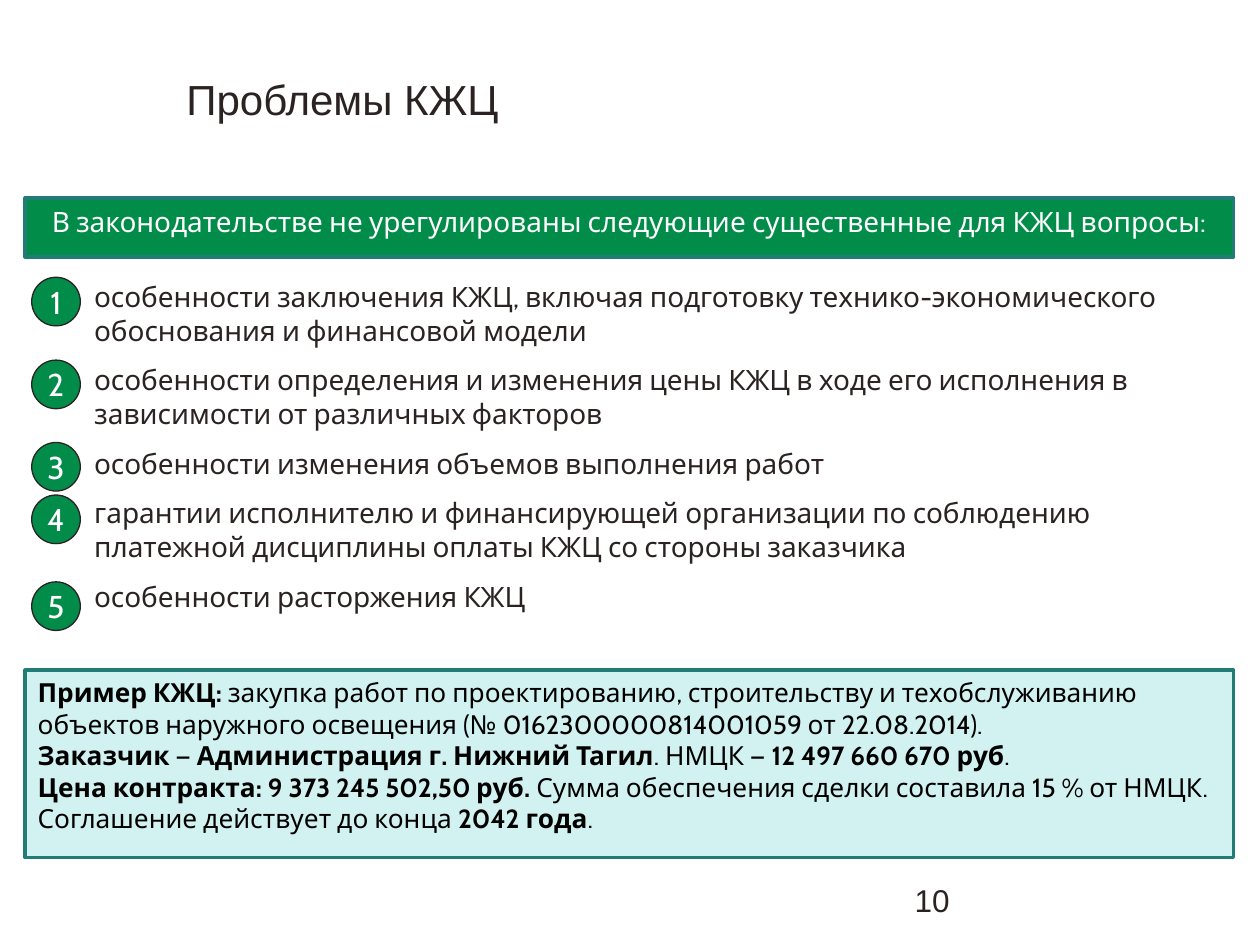
import pptx
import pptx.dml.color
import pptx.enum.shapes
import pptx.enum.text
import pptx.util

Cm = pptx.util.Cm
Pt = pptx.util.Pt
Shape = pptx.enum.shapes.MSO_SHAPE
Align = pptx.enum.text.PP_ALIGN
Anchor = pptx.enum.text.MSO_ANCHOR

INK = "2B2222"
GREEN = "028C4A"
TEAL = "227C76"
PALE = "D1F2F0"
WHITE = "FFFFFF"
BLACK = "000000"


def color(hex_string):
    return pptx.dml.color.RGBColor.from_string(hex_string)


def write(box, paragraphs, font, size, text_color, para_format, frame_format):
    """Fill a box; each paragraph is a list of (text, bold) pairs."""
    frame = box.text_frame
    for name, value in ({"word_wrap": True} | frame_format).items():
        setattr(frame, name, value)
    for index, spans in enumerate(paragraphs):
        para = frame.add_paragraph() if index else frame.paragraphs[0]
        for name, value in para_format.items():
            if index or name != "space_before":
                setattr(para, name, value)
        for text, bold in spans:
            span = para.add_run()
            span.text = text
            for name, value in {"name": font, "size": Pt(size), "bold": bold}.items():
                setattr(span.font, name, value)
            span.font.color.rgb = color(text_color)


deck = pptx.Presentation()
deck.slide_width = Cm(25.4)
deck.slide_height = Cm(19.05)
slide = deck.slides.add_slide(deck.slide_layouts[6])
shapes = slide.shapes

# Page number and title
for text, size, bounds in [
    ("10", 18, (18.21, 17.65, 5.92, 1.02)),
    ("Проблемы КЖЦ", 24, (3.53, 1.37, 20.35, 1.24)),
]:
    box = shapes.add_textbox(*map(Cm, bounds))
    margins = {"margin_left": Cm(0.23), "margin_right": Cm(0.23),
               "margin_top": Cm(0.11), "margin_bottom": Cm(0.11)}
    write(box, [[(text, False)]], "Arial", size, INK, {"alignment": Align.LEFT}, margins)

# Open issues
issues = [
    "особенности заключения КЖЦ, включая подготовку технико-экономического обоснования и финансовой модели",
    "особенности определения и изменения цены КЖЦ в ходе его исполнения в зависимости от различных факторов",
    "особенности изменения объемов выполнения работ",
    "гарантии исполнителю и финансирующей организации по соблюдению платежной дисциплины оплаты КЖЦ "
    "со стороны заказчика",
    "особенности расторжения КЖЦ",
]
issue_list = shapes.add_textbox(Cm(0.41), Cm(5.51), Cm(23.32), Cm(9.22))
write(issue_list, [[(issue, False)] for issue in issues], "Cabin", 16, INK,
      {"space_before": Pt(3.2), "space_after": Pt(6)}, {})
for para in issue_list.text_frame.paragraphs:
    properties = para._p.get_or_add_pPr()
    properties.set("marL", str(Cm(1.24)))
    properties.set("indent", "0")

# Number badges
for number, top in enumerate([5.59, 7.26, 8.92, 9.98, 11.73], start=1):
    badge = shapes.add_shape(Shape.OVAL, Cm(0.64), Cm(top), Cm(0.98), Cm(0.98))
    badge.shadow.inherit = False
    badge.fill.solid()
    badge.fill.fore_color.rgb = color(GREEN)
    badge.line.color.rgb = color(INK)
    badge.line.width = Pt(0.75)
    write(badge, [[(str(number), False)]], "Cabin", 18, WHITE, {"alignment": Align.CENTER},
          {"word_wrap": False, "vertical_anchor": Anchor.MIDDLE})

# Heading band and example panel
heading = [[("В законодательстве не урегулированы следующие существенные для КЖЦ вопросы:", False)]]
example = [
    [("Пример КЖЦ: ", True),
     ("закупка работ по проектированию, строительству и техобслуживанию объектов наружного освещения "
      "(№ 0162300000814001059 от 22.08.2014).", False)],
    [("Заказчик ", True), ("— ", False), ("Администрация г. Нижний Тагил", True),
     (". НМЦК — ", False), ("12 497 660 670 руб", True), (".", False)],
    [("Цена контракта: 9 373 245 502,50 руб. ", True),
     ("Сумма обеспечения сделки составила 15 % от НМЦК.", False)],
    [("Соглашение действует до конца ", False), ("2042 года", True), (".", False)],
]
for top, height, fill, paragraphs, size, text_color, alignment in [
    (3.99, 1.19, GREEN, heading, 16, WHITE, Align.CENTER),
    (13.51, 3.78, PALE, example, 15, BLACK, Align.LEFT),
]:
    panel = shapes.add_shape(Shape.RECTANGLE, Cm(0.51), Cm(top), Cm(24.36), Cm(height))
    panel.shadow.inherit = False
    panel.fill.solid()
    panel.fill.fore_color.rgb = color(fill)
    panel.line.color.rgb = color(TEAL)
    panel.line.width = Pt(2)
    write(panel, paragraphs, "Cabin", size, text_color, {"alignment": alignment},
          {"vertical_anchor": Anchor.TOP})

deck.save("out.pptx")
